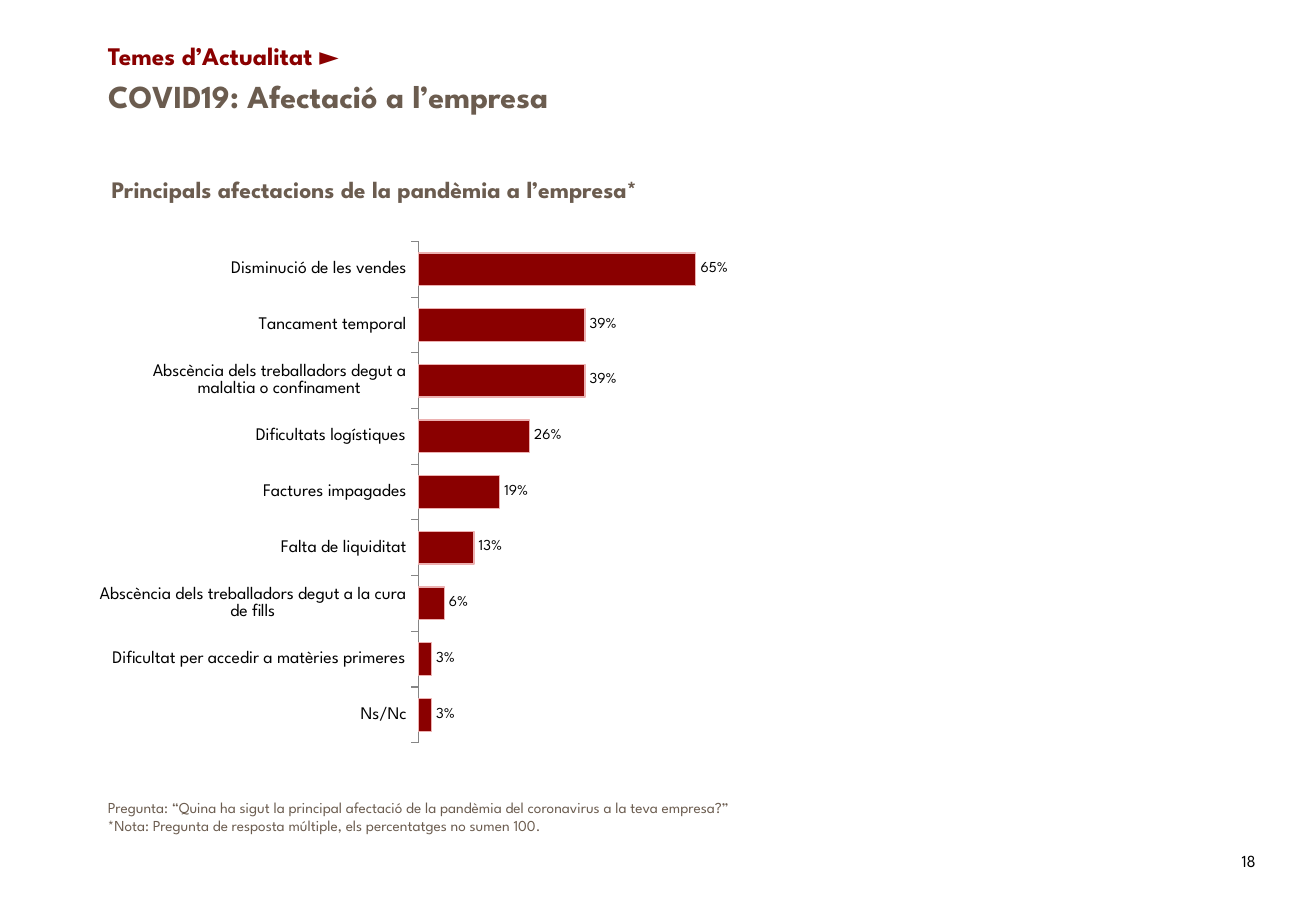
import pptx
import pptx.chart.data
import pptx.dml.color
import pptx.enum.chart
import pptx.enum.text
import pptx.oxml
import pptx.oxml.ns
import pptx.util

EMU_PER_PX = 9144  # 100 px to the inch
FONT_NAME = "League Spartan"
DARK_RED = pptx.dml.color.RGBColor(0x8A, 0x00, 0x00)
PALE_RED = pptx.dml.color.RGBColor(0xEC, 0xB1, 0xB1)
BROWN = pptx.dml.color.RGBColor(0x6B, 0x5C, 0x4F)
BLACK = pptx.dml.color.RGBColor(0x00, 0x00, 0x00)
AXIS_GREY = pptx.dml.color.RGBColor(0x86, 0x86, 0x86)

TOP = pptx.enum.text.MSO_ANCHOR.TOP
MIDDLE = pptx.enum.text.MSO_ANCHOR.MIDDLE

IMPACTS = [
    ("Disminució de les vendes", 0.65),
    ("Tancament temporal", 0.39),
    ("Abscència dels treballadors degut a malaltia o confinament", 0.39),
    ("Dificultats logístiques", 0.26),
    ("Factures impagades", 0.19),
    ("Falta de liquiditat", 0.13),
    ("Abscència dels treballadors degut a la cura de fills", 0.06),
    ("Dificultat per accedir a matèries primeres", 0.03),
    ("Ns/Nc", 0.03),
]
PLOT_LAYOUT = {"x": 0.368, "y": 0.052, "w": 0.414, "h": 0.899}


def px(length):
    return pptx.util.Emu(length * EMU_PER_PX)


def format_font(font, size, color, bold=False):
    values = {"name": FONT_NAME, "size": pptx.util.Pt(size), "bold": bold}
    for attribute, value in values.items():
        setattr(font, attribute, value)
    font.color.rgb = color


def fill_text(shape, lines, size, color, bold=False, anchor=TOP):
    frame = shape.text_frame
    values = {
        "word_wrap": True,
        "auto_size": pptx.enum.text.MSO_AUTO_SIZE.NONE,
        "vertical_anchor": anchor,
    }
    for attribute, value in values.items():
        setattr(frame, attribute, value)
    frame.text = "\n".join(lines)
    for paragraph in frame.paragraphs:
        paragraph.alignment = pptx.enum.text.PP_ALIGN.LEFT
        for run in paragraph.runs:
            format_font(run.font, size, color, bold)


def place_title(slide, box, text, size, color):
    title = slide.shapes.title
    for attribute, length in zip(("left", "top", "width", "height"), box):
        setattr(title, attribute, px(length))
    fill_text(title, [text], size, color, bold=True, anchor=MIDDLE)


def add_text(slide, box, lines, size, color, **options):
    shape = slide.shapes.add_textbox(*map(px, box))
    fill_text(shape, lines, size, color, **options)


def set_plot_layout(chart):
    plot_area = chart.element.find(".//" + pptx.oxml.ns.qn("c:plotArea"))
    for layout in plot_area.findall(pptx.oxml.ns.qn("c:layout")):
        plot_area.remove(layout)
    modes = "".join(f'<c:{key}Mode val="edge"/>' for key in "xy")
    sizes = "".join(f'<c:{key} val="{value}"/>' for key, value in PLOT_LAYOUT.items())
    plot_area.insert(0, pptx.oxml.parse_xml(
        f'<c:layout {pptx.oxml.ns.nsdecls("c")}><c:manualLayout>'
        f'<c:layoutTarget val="inner"/>{modes}{sizes}</c:manualLayout></c:layout>'))


def format_axes(chart):
    category_axis = chart.category_axis
    category_axis.reverse_order = True
    category_axis.has_major_gridlines = False
    category_axis.major_tick_mark = pptx.enum.chart.XL_TICK_MARK.OUTSIDE
    category_axis.format.line.color.rgb = AXIS_GREY
    category_axis.format.line.width = pptx.util.Pt(0.75)
    format_font(category_axis.tick_labels.font, 10.5, BLACK)

    values = {
        "minimum_scale": 0,
        "maximum_scale": 0.82,
        "has_major_gridlines": False,
        "visible": False,
    }
    for attribute, value in values.items():
        setattr(chart.value_axis, attribute, value)


def format_bars(plot):
    plot.gap_width = 70
    plot.vary_by_categories = False
    bars = plot.series[0].format
    bars.fill.solid()
    bars.fill.fore_color.rgb = DARK_RED
    bars.line.color.rgb = PALE_RED
    bars.line.width = pptx.util.Pt(0.75)

    plot.has_data_labels = True
    labels = plot.data_labels
    values = {
        "show_value": True,
        "number_format": "0%",
        "number_format_is_linked": False,
        "position": pptx.enum.chart.XL_LABEL_POSITION.OUTSIDE_END,
    }
    for attribute, value in values.items():
        setattr(labels, attribute, value)
    format_font(labels.font, 9, BLACK)


def add_bar_chart(slide, box, rows):
    chart_data = pptx.chart.data.CategoryChartData(number_format="0%")
    chart_data.categories = [name for name, share in rows]
    chart_data.add_series("Series 1", [share for name, share in rows])
    chart = slide.shapes.add_chart(
        pptx.enum.chart.XL_CHART_TYPE.BAR_CLUSTERED, *map(px, box), chart_data).chart
    chart.has_title = False
    chart.has_legend = False
    format_font(chart.font, 10, BLACK)
    set_plot_layout(chart)
    format_axes(chart)
    format_bars(chart.plots[0])


def main():
    presentation = pptx.Presentation()
    presentation.slide_width = px(1083)
    presentation.slide_height = px(750)
    slide = presentation.slides.add_slide(presentation.slide_layouts[5])

    # Section name and slide title
    add_text(slide, (79, 28, 956, 36), ["Temes d’Actualitat ►"], 15, DARK_RED,
             bold=True, anchor=MIDDLE)
    place_title(slide, (79, 63, 795, 31), "COVID19: Afectació a l’empresa", 19, BROWN)

    # Chart with its heading
    add_text(slide, (82, 139, 575, 34),
             ["Principals afectacions de la pandèmia a l’empresa*"], 14, BROWN,
             bold=True, anchor=MIDDLE)
    add_bar_chart(slide, (82, 175, 702, 459), IMPACTS)

    # Survey question, note and page number
    add_text(slide, (79, 652, 963, 40), [
        "Pregunta: “Quina ha sigut la principal afectació de la pandèmia del "
        "coronavirus a la teva empresa?”",
        "*Nota: Pregunta de resposta múltiple, els percentatges no sumen 100.",
    ], 9, BROWN)
    add_text(slide, (1012, 695, 67, 40), ["18"], 10, BLACK)

    presentation.save("out.pptx")


if __name__ == "__main__":
    main()
